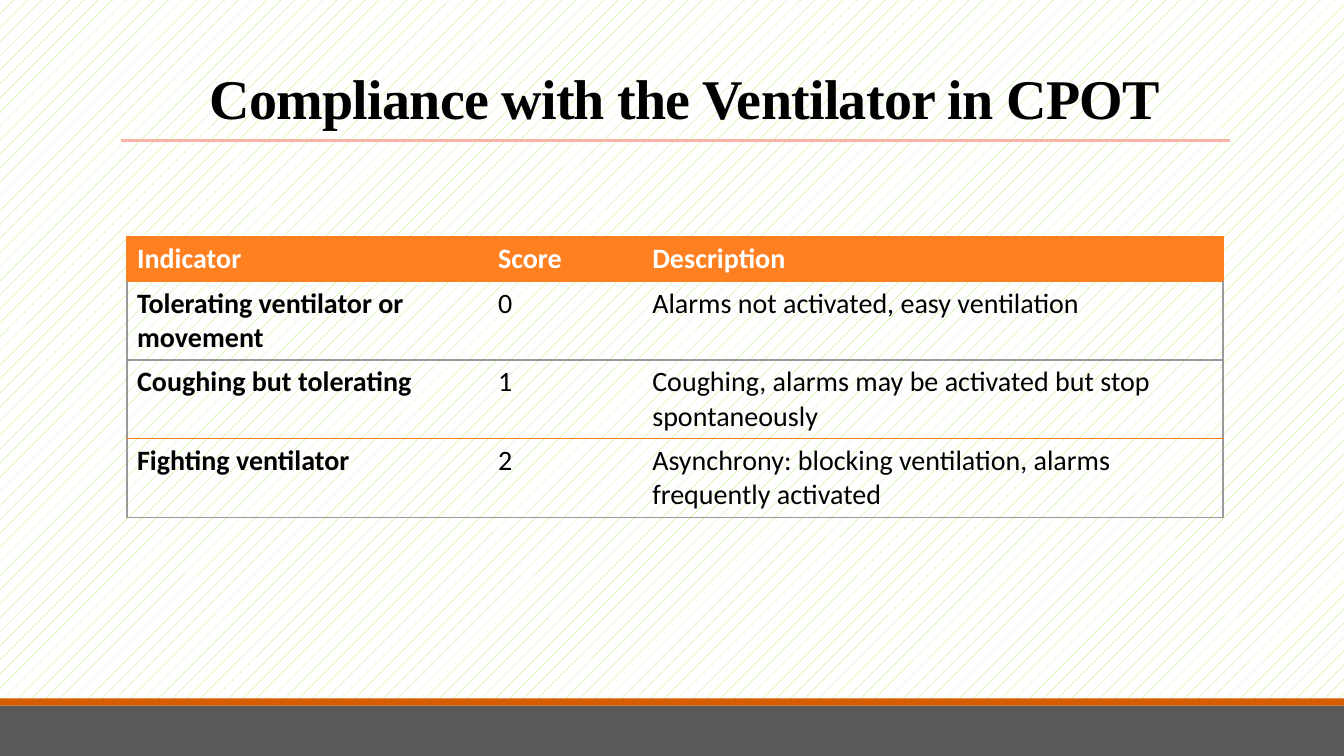
from lxml import etree
from pptx import Presentation
from pptx.dml.color import RGBColor
from pptx.enum.dml import MSO_PATTERN
from pptx.enum.shapes import MSO_CONNECTOR, MSO_SHAPE
from pptx.enum.text import MSO_ANCHOR, PP_ALIGN
from pptx.oxml.ns import qn
from pptx.util import Inches, Pt

TITLE = "Compliance with the Ventilator in CPOT"
ROWS = [
    ("Indicator", "Score", "Description"),
    ("Tolerating ventilator or movement", "0", "Alarms not activated, easy ventilation"),
    ("Coughing but tolerating", "1", "Coughing, alarms may be activated but stop spontaneously"),
    ("Fighting ventilator", "2", "Asynchrony: blocking ventilation, alarms frequently activated"),
]
COL_WIDTHS = (3.58, 1.53, 5.76)
ROW_HEIGHTS = (0.44, 0.78, 0.78, 0.78)

BLACK = RGBColor(0x00, 0x00, 0x00)
WHITE = RGBColor(0xFF, 0xFF, 0xFF)
GREEN = RGBColor(0xA7, 0xEA, 0x52)
GREY = RGBColor(0x59, 0x59, 0x59)
RULE_GREY = RGBColor(0x99, 0x99, 0x99)
DARK_ORANGE = RGBColor(0xD8, 0x5C, 0x00)
ORANGE = RGBColor(0xFF, 0x80, 0x21)
PINK = RGBColor(0xF9, 0xB3, 0xA7)
BANDS = [(7, 0.5, GREY), (6.93, 0.07, DARK_ORANGE)]  # top, height, colour
ROW_RULES = (ORANGE, ORANGE, RULE_GREY, ORANGE, RULE_GREY)  # from top to bottom
TITLE_ONLY = 5


def set_format(font, color, **values):
    for name, value in values.items():
        setattr(font, name, value)
    font.color.rgb = color


def set_borders(cell, colors):
    """Draw the left, right, top and bottom borders; None leaves a side open."""
    tc_pr = cell._tc.get_or_add_tcPr()
    for i, (side, color) in enumerate(zip("LRTB", colors)):
        ln = etree.Element(qn(f"a:ln{side}"), w=str(Pt(1)))
        if color is None:
            etree.SubElement(ln, qn("a:noFill"))
        else:
            fill = etree.SubElement(ln, qn("a:solidFill"))
            etree.SubElement(fill, qn("a:srgbClr"), val=str(color))
        tc_pr.insert(i, ln)


def add_title(s):
    title = s.shapes.title
    title.left, title.top = Inches(1.2), Inches(0.31)
    title.width, title.height = Inches(11), Inches(1.08)
    tf = title.text_frame
    frame = {"word_wrap": True, "vertical_anchor": MSO_ANCHOR.BOTTOM,
             "margin_left": Inches(0.28), "margin_bottom": Inches(0.09)}
    for name, value in frame.items():
        setattr(tf, name, value)
    p = tf.paragraphs[0]
    p.alignment, p.line_spacing = PP_ALIGN.CENTER, 0.85
    r = p.add_run()
    r.text = TITLE
    set_format(r.font, BLACK, name="Times New Roman", size=Pt(40), bold=True)
    r._r.get_or_add_rPr().set("spc", "-50")


def add_score_table(s):
    frame = s.shapes.add_table(len(ROWS), len(COL_WIDTHS), Inches(1.26), Inches(2.35),
                               Inches(sum(COL_WIDTHS)), Inches(sum(ROW_HEIGHTS)))
    table = frame.table
    table.horz_banding = False
    for column, width in zip(table.columns, COL_WIDTHS):
        column.width = Inches(width)
    for row, height in zip(table.rows, ROW_HEIGHTS):
        row.height = Inches(height)
    last = len(COL_WIDTHS) - 1
    for i, texts in enumerate(ROWS):
        header = i == 0
        edge = ORANGE if header else RULE_GREY
        for j, text in enumerate(texts):
            cell = table.cell(i, j)
            if header:
                cell.fill.solid()
                cell.fill.fore_color.rgb = ORANGE
            else:
                cell.fill.background()
            set_borders(cell, (edge if j == 0 else None, edge if j == last else None,
                               ROW_RULES[i], ROW_RULES[i + 1]))
            r = cell.text_frame.paragraphs[0].add_run()
            r.text = text
            set_format(r.font, WHITE if header else BLACK, name="Calibri",
                       size=Pt(20), bold=header or j == 0)


def main():
    prs = Presentation()
    prs.slide_width, prs.slide_height = Inches(13.33), Inches(7.5)
    s = prs.slides.add_slide(prs.slide_layouts[TITLE_ONLY])
    fill = s.background.fill
    fill.patterned()
    fill.pattern = MSO_PATTERN.PERCENT_5
    fill.fore_color.rgb, fill.back_color.rgb = GREEN, WHITE

    for top, height, color in BANDS:
        band = s.shapes.add_shape(MSO_SHAPE.RECTANGLE, 0, Inches(top),
                                  prs.slide_width, Inches(height))
        band.shadow.inherit = False
        band.fill.solid()
        band.fill.fore_color.rgb = color
        band.line.fill.background()

    rule = s.shapes.add_connector(MSO_CONNECTOR.STRAIGHT, Inches(1.2), Inches(1.39),
                                  Inches(12.2), Inches(1.39))
    rule.line.color.rgb, rule.line.width = PINK, Pt(2.25)
    etree.SubElement(rule._element.spPr, qn("a:effectLst"))

    add_title(s)
    add_score_table(s)
    prs.save("out.pptx")


if __name__ == "__main__":
    main()
